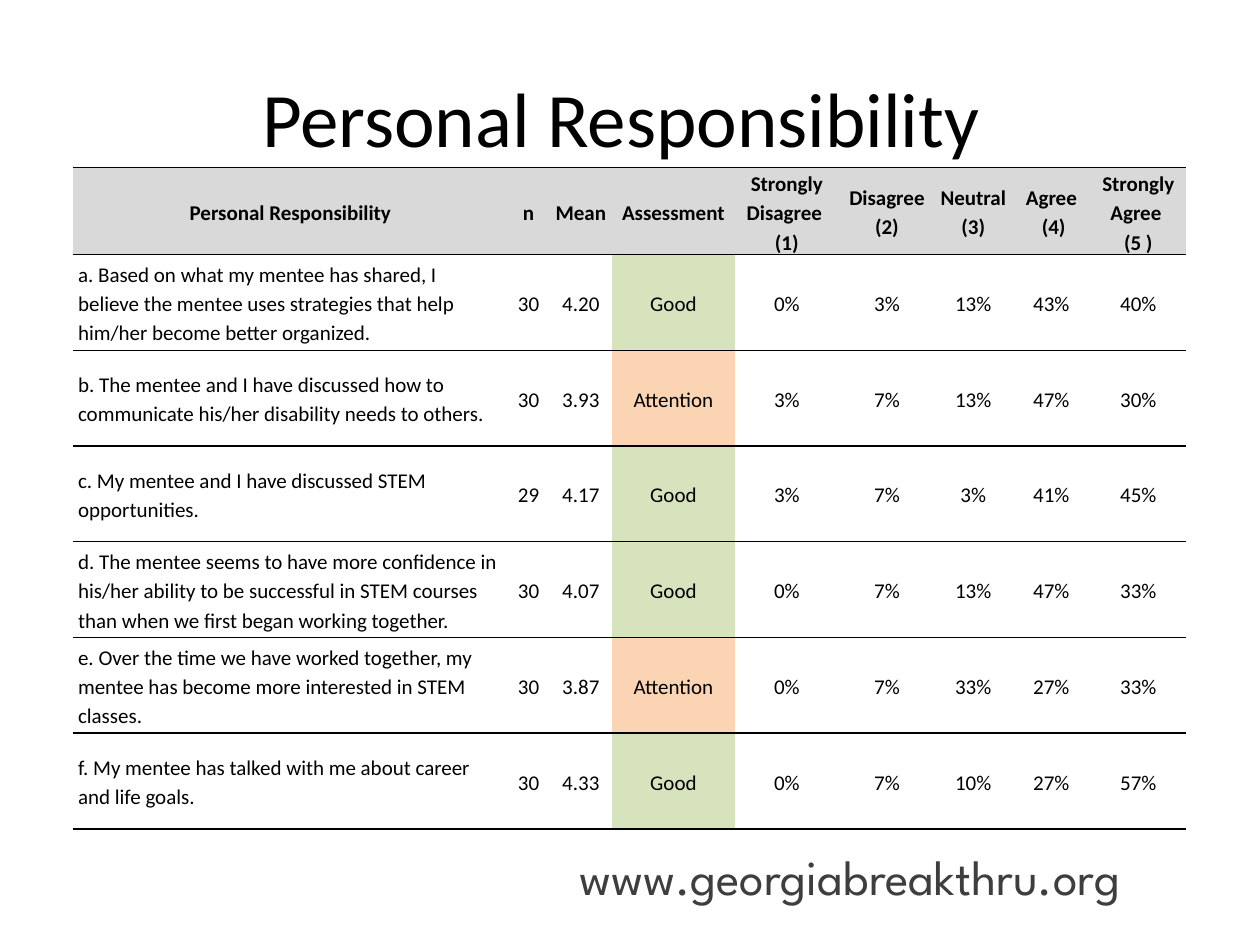
"""Build the Personal Responsibility survey results slide."""
from lxml.etree import SubElement
from pptx import Presentation
from pptx.dml.color import RGBColor
from pptx.enum.text import MSO_ANCHOR as Anchor, PP_ALIGN as Align
from pptx.oxml.ns import qn
from pptx.util import Inches, Pt

COLORS = {
    "text": "000000",
    "rule": "000000",
    "header": "D9D9D9",
    "Good": "D6E3BC",
    "Attention": "FBD4B4",
    "address": "3E3E3E",
}
NO_STYLE = "{2D5ABB26-0587-4C30-8999-92F81FD0307C}"
COLUMN_WIDTHS = [3.45, 0.33, 0.5, 0.97, 0.83, 0.76, 0.61, 0.63, 0.75]
HEADER_HEIGHT, ITEM_HEIGHT = 0.29, 0.76
HEADINGS = [
    "Personal Responsibility", "n", "Mean", "Assessment",
    "Strongly Disagree \n(1)", "Disagree (2)", "Neutral (3)",
    "Agree\n (4)", "Strongly Agree \n(5 )",
]
ITEMS = [
    ("a. Based on what my mentee has shared, I believe the mentee uses strategies "
     "that help him/her become better organized.",
     "30", "4.20", "Good", "0%", "3%", "13%", "43%", "40%"),
    ("b. The mentee and I have discussed how to communicate his/her disability "
     "needs to others.",
     "30", "3.93", "Attention", "3%", "7%", "13%", "47%", "30%"),
    ("c. My mentee and I have discussed STEM opportunities.",
     "29", "4.17", "Good", "3%", "7%", "3%", "41%", "45%"),
    ("d. The mentee seems to have more confidence in his/her ability to be "
     "successful in STEM courses than when we first began working together.",
     "30", "4.07", "Good", "0%", "7%", "13%", "47%", "33%"),
    ("e. Over the time we have worked together, my mentee has become more "
     "interested in STEM classes.",
     "30", "3.87", "Attention", "0%", "7%", "33%", "27%", "33%"),
    ("f. My mentee has talked with me about career and life goals.",
     "30", "4.33", "Good", "0%", "7%", "10%", "27%", "57%"),
]


def write(frame, text, size=12, font="Calibri", color="text", bold=False,
          align=Align.LEFT, spacing=None):
    frame.word_wrap = True
    frame.text = text
    for paragraph in frame.paragraphs:
        paragraph.alignment = align
        paragraph.line_spacing = spacing
        for run in paragraph.runs:
            run.font.name = font
            run.font.size = Pt(size)
            run.font.bold = bold
            run.font.color.rgb = RGBColor.from_string(COLORS[color])


def add_text(slide, box, text, anchor=Anchor.TOP, **style):
    frame = slide.shapes.add_textbox(*map(Inches, box)).text_frame
    frame.vertical_anchor = anchor
    write(frame, text, **style)


def add_rules(cell):
    properties = cell._tc.get_or_add_tcPr()
    for edge in ("a:lnT", "a:lnB"):
        line = SubElement(properties, qn(edge), w=str(Pt(1)))
        fill = SubElement(line, qn("a:solidFill"))
        SubElement(fill, qn("a:srgbClr"), val=COLORS["rule"])


def fill_cell(cell, text, shade=None, **style):
    cell.margin_left = cell.margin_right = Inches(0.04)
    cell.margin_top = cell.margin_bottom = 0
    cell.vertical_anchor = Anchor.MIDDLE
    write(cell.text_frame, text, spacing=1.15, **style)
    add_rules(cell)
    if shade:
        cell.fill.solid()
        cell.fill.fore_color.rgb = RGBColor.from_string(COLORS[shade])
    else:
        cell.fill.background()


def add_results(slide):
    frame = slide.shapes.add_table(
        len(ITEMS) + 1, len(HEADINGS),
        Inches(0.58), Inches(1.33), Inches(8.83), Inches(5.23))
    results = frame.table
    results.horz_banding = False
    results._tbl.tblPr.find(qn("a:tableStyleId")).text = NO_STYLE
    for column, width in zip(results.columns, COLUMN_WIDTHS):
        column.width = Inches(width)
    for index, row in enumerate(results.rows):
        row.height = Inches(ITEM_HEIGHT if index else HEADER_HEIGHT)

    for column, heading in enumerate(HEADINGS):
        fill_cell(results.cell(0, column), heading, shade="header",
                  bold=True, align=Align.CENTER)
    for row, item in enumerate(ITEMS, start=1):
        for column, value in enumerate(item):
            fill_cell(results.cell(row, column), value,
                      shade=value if value in COLORS else None,
                      align=Align.CENTER if column else Align.LEFT)


def main():
    deck = Presentation()
    deck.slide_width, deck.slide_height = Inches(10), Inches(7.5)
    slide = deck.slides.add_slide(deck.slide_layouts[6])
    add_text(slide, (0.5, 0.3, 9, 1.25), "Personal Responsibility ",
             anchor=Anchor.MIDDLE, size=44, align=Align.CENTER)
    add_results(slide)
    add_text(slide, (4.5, 6.67, 5.33, 0.4), "www.georgiabreakthru.org",
             size=28, font="League Spartan", color="address")
    deck.save("out.pptx")


if __name__ == "__main__":
    main()
